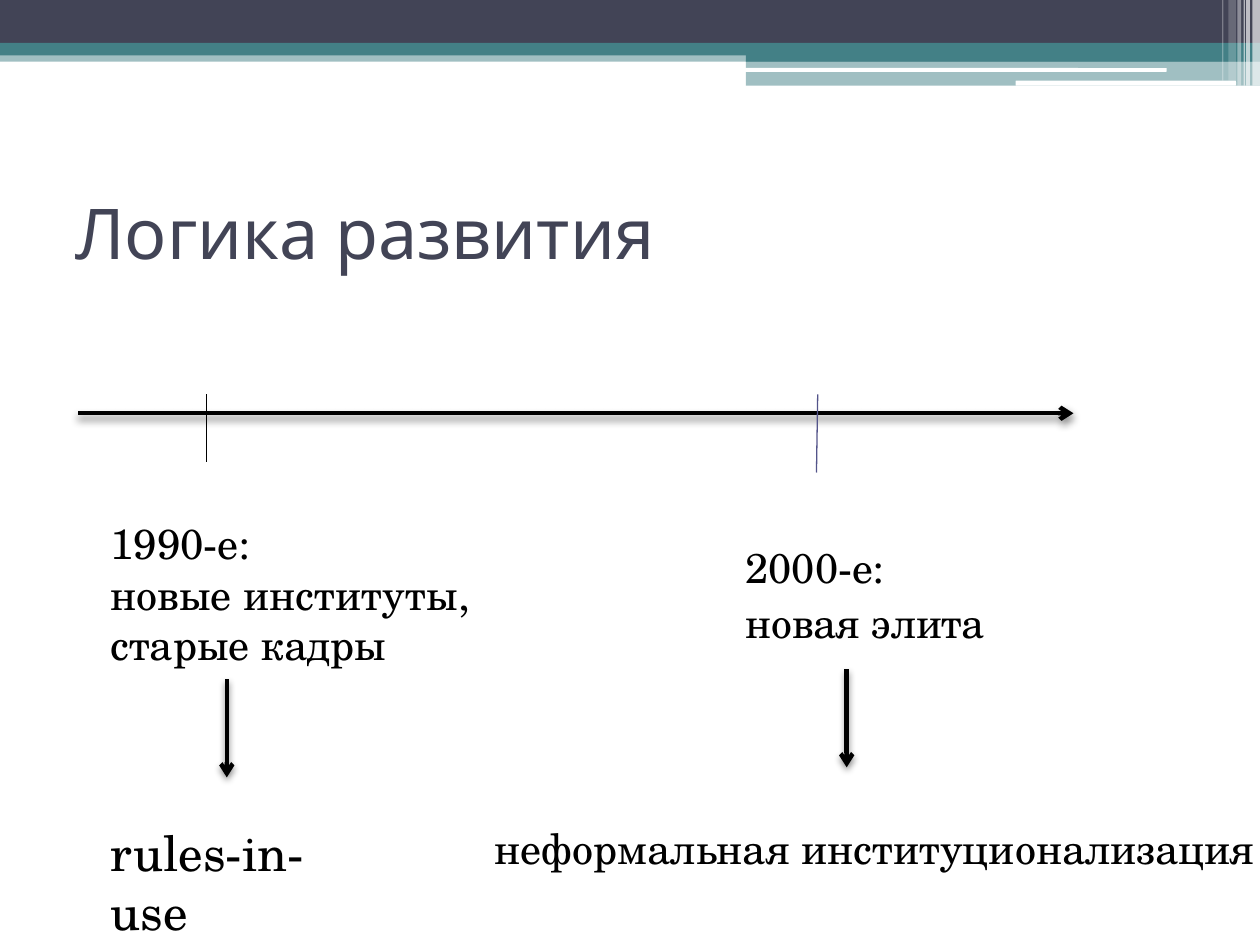
from lxml import etree
from pptx import Presentation
from pptx import util as u
from pptx.dml.color import RGBColor
from pptx.enum import shapes, text
from pptx.oxml.ns import qn

DARK, TEAL, WHITE, BLACK = "424456", "438086", "FFFFFF", "000000"
SERIF = "TeX Gyre Schola"


def color(value):
    return RGBColor.from_string(value)


def add_block(s, x, y, w, h, fill, alpha=100, rounded=False):
    kind = shapes.MSO_SHAPE.ROUNDED_RECTANGLE if rounded else shapes.MSO_SHAPE.RECTANGLE
    sp = s.shapes.add_shape(kind, *map(u.Inches, (x, y, w, h)))
    sp.shadow.inherit = False
    sp.fill.solid()
    sp.fill.fore_color.rgb = color(fill)
    sp.line.fill.background()
    if alpha < 100:
        clr = sp.fill._xPr.find(".//" + qn("a:srgbClr"))
        etree.SubElement(clr, qn("a:alpha"), val=str(alpha * 1000))


def add_text(s, lines, x, y, w, h, size=24, font=SERIF, fill=BLACK,
             anchor=text.MSO_ANCHOR.TOP, gap=0):
    tf = s.shapes.add_textbox(*map(u.Inches, (x, y, w, h))).text_frame
    tf.word_wrap = True
    tf.vertical_anchor = anchor
    for i, line in enumerate(lines):
        p = tf.add_paragraph() if i else tf.paragraphs[0]
        p.space_before = u.Pt(gap if i else 0)
        r = p.add_run()
        r.text = line
        r.font.size = u.Pt(size)
        r.font.name = font
        r.font.color.rgb = color(fill)


def add_line(s, x1, y1, x2, y2, fill=BLACK, width=0.75):
    cn = s.shapes.add_connector(shapes.MSO_CONNECTOR.STRAIGHT,
                                *map(u.Inches, (x1, y1, x2, y2)))
    cn.line.color.rgb = color(fill)
    cn.line.width = u.Pt(width)
    effects = etree.SubElement(cn._element.spPr, qn("a:effectLst"))
    return cn, effects


def add_arrow(s, x1, y1, x2, y2):
    cn, effects = add_line(s, x1, y1, x2, y2, width=2.5)
    etree.SubElement(cn.line._get_or_add_ln(), qn("a:tailEnd"), type="arrow")
    shadow = etree.SubElement(effects, qn("a:outerShdw"), blurRad=str(u.Pt(4)),
                              dist=str(u.Pt(2)), dir="5400000", rotWithShape="0")
    clr = etree.SubElement(shadow, qn("a:srgbClr"), val=BLACK)
    etree.SubElement(clr, qn("a:alpha"), val="45000")


def add_header(s):
    add_block(s, 0, 0.4, 10, 0.09, TEAL, 50)
    add_block(s, 0, 0, 10, 0.34, DARK)
    add_block(s, 0, 0.34, 10, 0.1, TEAL)
    add_block(s, 5.92, 0.39, 4.08, 0.1, TEAL)
    add_block(s, 5.92, 0.48, 4.08, 0.2, TEAL, 50)
    add_block(s, 5.91, 0.54, 3.35, 0.03, WHITE, rounded=True)
    add_block(s, 8.06, 0.64, 1.75, 0.04, WHITE, rounded=True)
    stripes = [(9.94, 0.06, 0.68, 65), (9.89, 0.03, 0.68, 65), (9.87, 0.01, 0.68, 60),
               (9.82, 0.03, 0.68, 40), (9.75, 0.06, 0.64, 20), (9.7, 0.01, 0.64, 30)]
    for x, w, h, alpha in stripes:
        add_block(s, x, 0, w, h, WHITE, alpha)


def main():
    prs = Presentation()
    prs.slide_width, prs.slide_height = u.Inches(10), u.Inches(7.5)
    s = prs.slides.add_slide(prs.slide_layouts[6])
    add_header(s)
    add_text(s, ["Логика развития"], 0.5, 1.25, 9, 1.17, size=40, font="Karla",
             fill=DARK, anchor=text.MSO_ANCHOR.MIDDLE)

    add_arrow(s, 0.62, 3.28, 8.52, 3.28)
    add_line(s, 1.64, 3.13, 1.64, 3.67)
    add_line(s, 6.49, 3.13, 6.48, 3.75, fill="53548A")

    add_text(s, ["1990-е:", "новые институты,", "старые кадры"], 0.78, 4.06, 3.2, 1.31)
    add_text(s, ["2000-е:", "новая элита"], 5.82, 4.25, 2.15, 0.95, size=23.8, gap=3)
    for x, y in [(1.8, 5.39), (6.72, 5.31)]:
        add_arrow(s, x, y, x, y + 0.78)
    add_text(s, ["rules-in-use"], 0.78, 6.48, 2.29, 0.57, size=28)
    add_text(s, ["неформальная институционализация"], 3.83, 6.48, 6.41, 0.5)
    prs.save("out.pptx")


if __name__ == "__main__":
    main()
